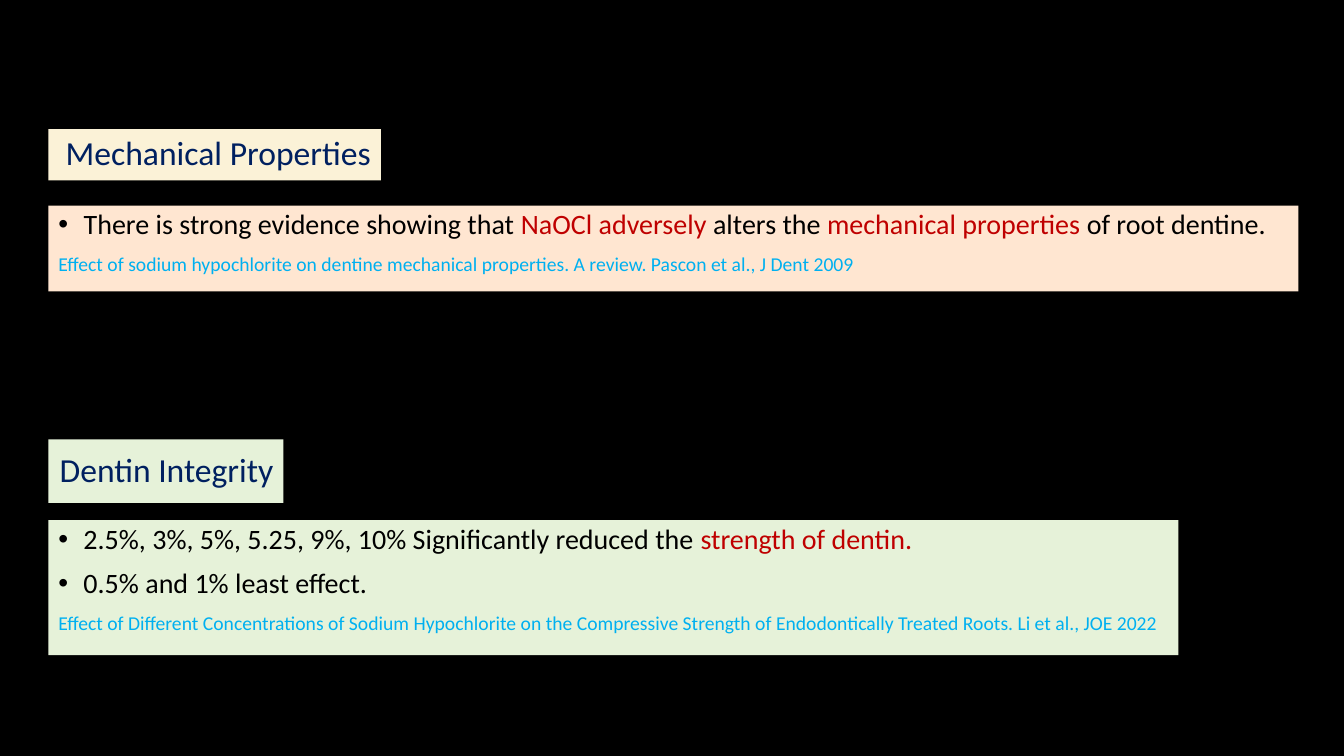
from pptx import Presentation
from pptx.dml.color import RGBColor
from pptx.enum.text import MSO_ANCHOR, MSO_AUTO_SIZE, PP_ALIGN
from pptx.oxml.ns import qn
from pptx.util import Inches, Pt
from lxml import etree

RIGHT, LEFT = PP_ALIGN.RIGHT, PP_ALIGN.LEFT
TOP, MIDDLE = MSO_ANCHOR.TOP, MSO_ANCHOR.MIDDLE
NO_AUTOFIT = MSO_AUTO_SIZE.NONE

BLACK = RGBColor(0x00, 0x00, 0x00)
NAVY = RGBColor(0x00, 0x20, 0x60)
RED = RGBColor(0xBF, 0x00, 0x00)
SKY = RGBColor(0x00, 0xB0, 0xF0)
CREAM = RGBColor(0xFB, 0xF2, 0xD7)
PEACH = RGBColor(0xFF, 0xE6, 0xD1)
GREEN = RGBColor(0xE6, 0xF2, 0xD9)

SLIDE_WIDTH, SLIDE_HEIGHT = Inches(13.33), Inches(7.5)
INDENT = Inches(0.25)

HEADING = {"size": Pt(24), "color": NAVY, "align": RIGHT}
BULLET = {"size": Pt(20), "color": BLACK, "align": LEFT, "bullet": True}
CITATION = {"size": Pt(14), "color": SKY, "align": LEFT}

# Boxes are percentages of the slide; heading and body are percentages of the box
SECTIONS = [
    {
        "box": (3.6, 17.07, 93, 21.47),
        "heading_size": (26.6, 31.7), "body_height": 52.8,
        "fills": (CREAM, PEACH),
        "heading": "Mechanical Properties ",
        "body": [
            (BULLET, [("There is strong evidence showing that ", BLACK),
                      ("NaOCl adversely ", RED), ("alters the ", BLACK),
                      ("mechanical properties ", RED), ("of root dentine.", BLACK)]),
            (CITATION, [("Effect of sodium hypochlorite on dentine mechanical properties. "
                         "A review. Pascon et al., J Dent 2009", SKY)]),
        ],
    },
    {
        "box": (3.6, 58.13, 84.08, 28.53),
        "heading_size": (20.8, 29.4), "body_height": 62.6,
        "fills": (GREEN, GREEN),
        "heading": "Dentin Integrity ",
        "body": [
            (BULLET, [("2.5%, 3%, 5%, 5.25, 9%, 10% Significantly reduced the ", BLACK),
                      ("strength of dentin.", RED)]),
            (BULLET, [("0.5% and 1% least effect.", BLACK)]),
            (CITATION, [("Effect of Different Concentrations of Sodium Hypochlorite on the "
                         "Compressive Strength of Endodontically Treated Roots. "
                         "Li et al., JOE 2022", SKY)]),
        ],
    },
]


def share(length, percent):
    return round(length * percent / 100)


def set_bullet(paragraph, bulleted):
    properties = paragraph._p.get_or_add_pPr()
    properties.set("marL", str(INDENT if bulleted else 0))
    properties.set("indent", str(-INDENT if bulleted else 0))
    if bulleted:
        etree.SubElement(properties, qn("a:buFont")).set("typeface", "Arial")
        etree.SubElement(properties, qn("a:buChar")).set("char", "•")
    else:
        etree.SubElement(properties, qn("a:buNone"))


def fill_panel(shape, bounds, fill, anchor, paragraphs):
    """Place a filled panel and write its paragraphs."""
    for name, value in zip(("left", "top", "width", "height"), bounds):
        setattr(shape, name, value)
    shape.fill.solid()
    shape.fill.fore_color.rgb = fill
    frame = shape.text_frame
    frame_format = {"word_wrap": True, "auto_size": NO_AUTOFIT, "vertical_anchor": anchor}
    for name, value in frame_format.items():
        setattr(frame, name, value)
    for index, (style, runs) in enumerate(paragraphs):
        paragraph = frame.add_paragraph() if index else frame.paragraphs[0]
        set_bullet(paragraph, style.get("bullet", False))
        paragraph_format = {"alignment": style["align"], "line_spacing": 0.9,
                            "space_before": Pt(10 if index else 0), "space_after": Pt(0)}
        for name, value in paragraph_format.items():
            setattr(paragraph, name, value)
        for text, color in runs:
            run = paragraph.add_run()
            run.text = text
            for name, value in {"name": "Calibri", "size": style["size"]}.items():
                setattr(run.font, name, value)
            run.font.color.rgb = color


def add_section(heading_shape, body_shape, section):
    """Heading at the top left of the box, body along its bottom."""
    x, y, w, h = section["box"]
    left, width = share(SLIDE_WIDTH, x), share(SLIDE_WIDTH, w)
    top, height = share(SLIDE_HEIGHT, y), share(SLIDE_HEIGHT, h)
    heading_width, heading_height = section["heading_size"]
    body_height = share(height, section["body_height"])
    heading_fill, body_fill = section["fills"]
    fill_panel(heading_shape,
               (left, top, share(width, heading_width), share(height, heading_height)),
               heading_fill, MIDDLE, [(HEADING, [(section["heading"], HEADING["color"])])])
    fill_panel(body_shape, (left, top + height - body_height, width, body_height),
               body_fill, TOP, section["body"])


def main():
    presentation = Presentation()
    presentation.slide_width, presentation.slide_height = SLIDE_WIDTH, SLIDE_HEIGHT
    slide = presentation.slides.add_slide(presentation.slide_layouts[1])
    slide.background.fill.solid()
    slide.background.fill.fore_color.rgb = BLACK

    # Mechanical properties in the placeholders, dentin integrity in text boxes
    mechanical, dentin = SECTIONS
    add_section(slide.shapes.title, slide.placeholders[1], mechanical)
    heading_box, body_box = (slide.shapes.add_textbox(0, 0, 0, 0) for _ in range(2))
    add_section(heading_box, body_box, dentin)

    presentation.save("out.pptx")


if __name__ == "__main__":
    main()
